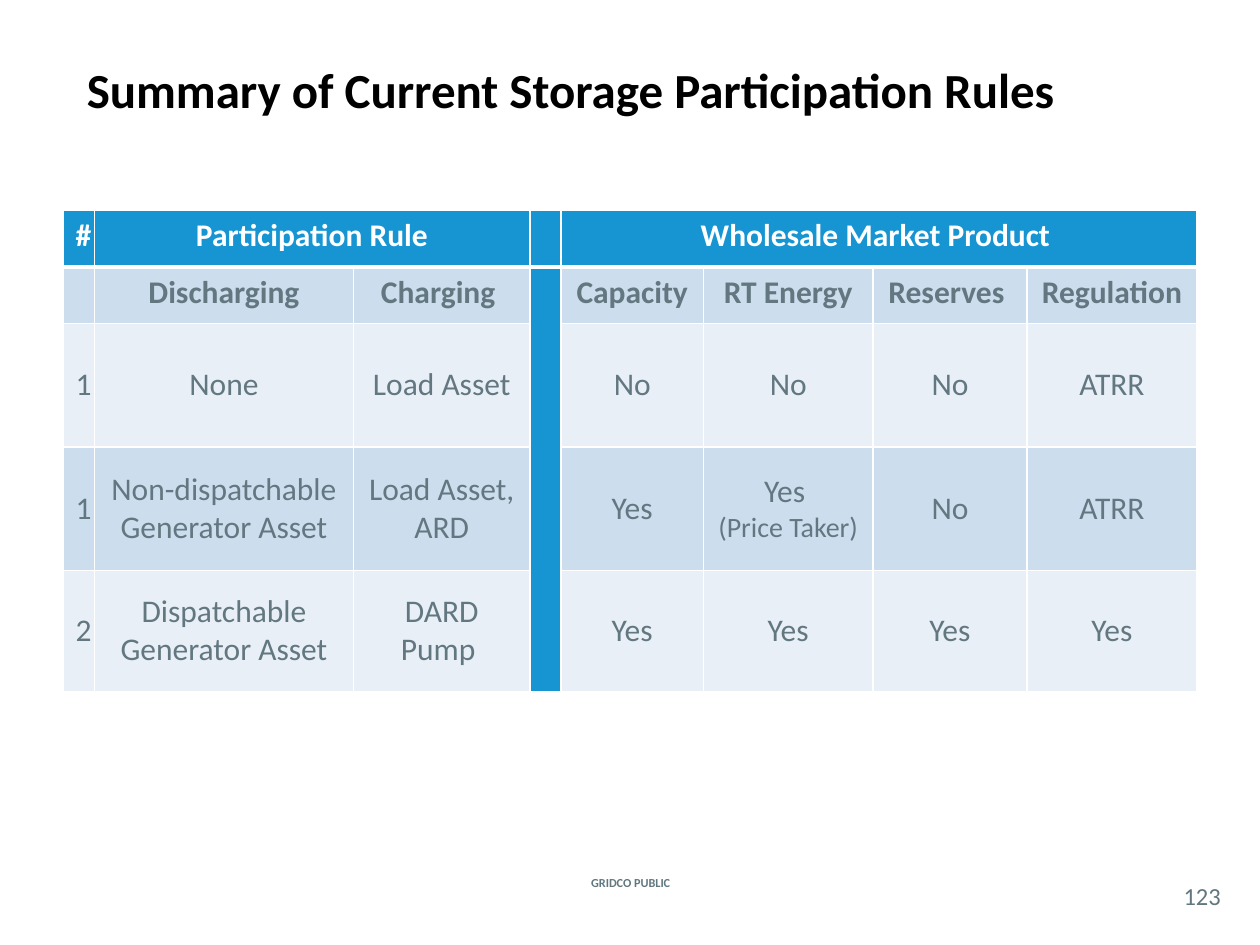
from lxml.etree import SubElement
from pptx import Presentation
from pptx.dml.color import RGBColor
from pptx.enum.text import MSO_ANCHOR as Anchor, PP_ALIGN as Align
from pptx.oxml.ns import qn
from pptx.util import Cm, Pt

BLACK = RGBColor(0x00, 0x00, 0x00)
WHITE = RGBColor(0xFF, 0xFF, 0xFF)
SLATE = RGBColor(0x62, 0x77, 0x7F)
BLUE = RGBColor(0x17, 0x95, 0xD2)
BANDS = [RGBColor(0xE8, 0xEF, 0xF7), RGBColor(0xCC, 0xDD, 0xEE)]

WIDTHS = [0.63, 5.23, 3.55, 0.63, 2.87, 3.42, 3.1, 3.43]
HEIGHTS = [1.14, 1.14, 2.49, 2.49, 2.44]
GAP_COLUMN = 3
ROWS = [
    ["#", "Participation Rule", "", "", "Wholesale Market Product ", "", "", ""],
    ["", "Discharging", "Charging ", "", "Capacity", "RT Energy", "Reserves ", "Regulation"],
    ["1", "None", "Load Asset", "", "No", "No", "No", "ATRR"],
    ["1", "Non-dispatchable Generator Asset", "Load Asset, ARD", "", "Yes",
     "Yes \n(Price Taker)", "No", "ATRR"],
    ["2", "Dispatchable Generator Asset", "DARD Pump ", "", "Yes", "Yes", "Yes", "Yes"],
]


def write(frame, text, size, color, bold, align):
    frame.text = text
    for para in frame.paragraphs:
        para.alignment = align
        for span in para.runs:
            span.font.name = "Calibri"
            span.font.size = Pt(size)
            span.font.bold = bold
            span.font.color.rgb = color


def add_border(cell, side, points):
    line = SubElement(cell._tc.get_or_add_tcPr(), qn(f"a:ln{side}"), w=str(Pt(points)))
    fill = SubElement(line, qn("a:solidFill"))
    SubElement(fill, qn("a:srgbClr"), val=str(WHITE))


deck = Presentation()
deck.slide_width, deck.slide_height = Cm(25.4), Cm(19.05)
page = deck.slides.add_slide(deck.slide_layouts[6])

for text, area, size, color, bold, align, inset in [
    ("GRIDCO PUBLIC", (10.85, 17.58, 3.73, 0.43), 7, SLATE, True, Align.CENTER, 0),
    ("123", (23.7, 17.68, 1.07, 0.74), 14, SLATE, False, Align.CENTER, 0),
    ("Summary of Current Storage Participation Rules", (1.27, 0.2, 22.86, 3.18),
     28, BLACK, True, Align.LEFT, 0.48),
]:
    box = page.shapes.add_textbox(*map(Cm, area))
    frame = box.text_frame
    frame.word_wrap = True
    frame.vertical_anchor = Anchor.MIDDLE
    frame.margin_left = Cm(inset)
    frame.margin_right = frame.margin_top = frame.margin_bottom = 0
    write(frame, text, size, color, bold, align)

table = page.shapes.add_table(
    len(ROWS), len(WIDTHS), Cm(1.27), Cm(4.24), Cm(sum(WIDTHS)), Cm(sum(HEIGHTS))
).table
for column, width in zip(table.columns, WIDTHS):
    column.width = Cm(width)
for row, height in zip(table.rows, HEIGHTS):
    row.height = Cm(height)

for row_index, texts in enumerate(ROWS):
    for column_index, text in enumerate(texts):
        cell = table.cell(row_index, column_index)
        header = row_index == 0
        for side in "LRTB":
            thick = (row_index, side) in [(0, "B"), (1, "T")]
            add_border(cell, side, 3 if thick else 1)
        cell.fill.solid()
        blue = header or column_index == GAP_COLUMN
        cell.fill.fore_color.rgb = BLUE if blue else BANDS[row_index % 2]
        cell.vertical_anchor = Anchor.TOP if row_index < 2 else Anchor.MIDDLE
        write(cell.text_frame, text, 18, WHITE if header else SLATE, row_index < 2, Align.CENTER)

table.cell(3, 5).text_frame.paragraphs[1].runs[0].font.size = Pt(16)
table.cell(0, 1).merge(table.cell(0, 2))
table.cell(0, 4).merge(table.cell(0, 7))
table.cell(1, GAP_COLUMN).merge(table.cell(4, GAP_COLUMN))

deck.save("out.pptx")
